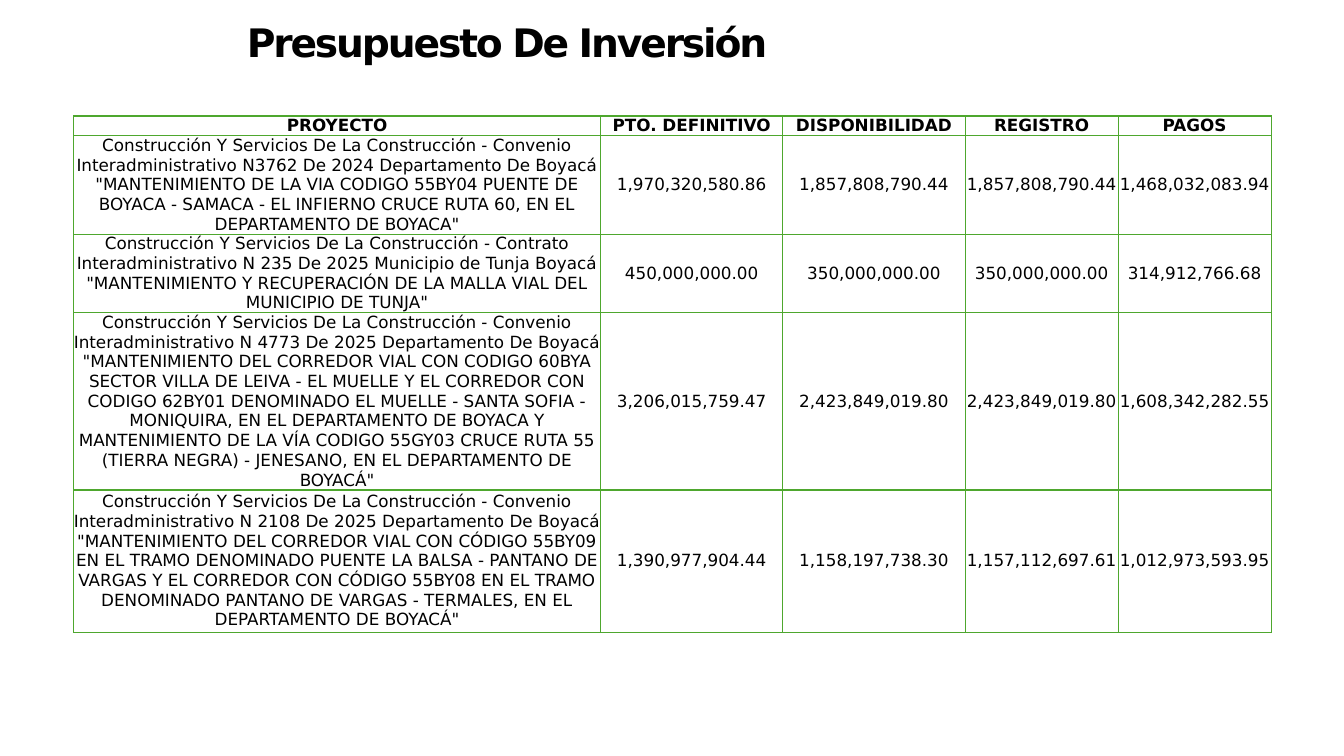
from dataclasses import dataclass

from lxml.etree import SubElement
from pptx import Presentation
from pptx.dml.color import RGBColor
from pptx.enum.text import MSO_ANCHOR as Anchor, PP_ALIGN as Align
from pptx.oxml.ns import qn
from pptx.util import Pt


@dataclass
class Theme:
    font: str = "DejaVu Sans"
    ink: RGBColor = RGBColor(0, 0, 0)
    border: RGBColor = RGBColor(0x4E, 0xA7, 0x2E)
    title_size: int = 28
    table_size: int = 12


theme = Theme()

HEADINGS = ("PROYECTO", "PTO. DEFINITIVO", "DISPONIBILIDAD", "REGISTRO", "PAGOS")
PROJECTS = [
    ('Construcción Y Servicios De La Construcción - Convenio Interadministrativo '
     'N3762 De 2024 Departamento De Boyacá "MANTENIMIENTO DE LA VIA CODIGO 55BY04 '
     'PUENTE DE BOYACA - SAMACA - EL INFIERNO CRUCE RUTA 60, EN EL DEPARTAMENTO DE BOYACA"',
     "1,970,320,580.86", "1,857,808,790.44", "1,857,808,790.44", "1,468,032,083.94"),
    ('Construcción Y Servicios De La Construcción - Contrato Interadministrativo '
     'N 235 De 2025 Municipio de Tunja Boyacá "MANTENIMIENTO Y RECUPERACIÓN DE LA '
     'MALLA VIAL DEL MUNICIPIO DE TUNJA"',
     "450,000,000.00", "350,000,000.00", "350,000,000.00", "314,912,766.68"),
    ('Construcción Y Servicios De La Construcción - Convenio Interadministrativo '
     'N 4773 De 2025 Departamento De Boyacá "MANTENIMIENTO DEL CORREDOR VIAL CON '
     'CODIGO 60BYA SECTOR VILLA DE LEIVA - EL MUELLE Y EL CORREDOR CON CODIGO 62BY01 '
     'DENOMINADO EL MUELLE - SANTA SOFIA - MONIQUIRA, EN EL DEPARTAMENTO DE BOYACA Y '
     'MANTENIMIENTO DE LA VÍA CODIGO 55GY03 CRUCE RUTA 55 (TIERRA NEGRA) - JENESANO, '
     'EN EL DEPARTAMENTO DE BOYACÁ"',
     "3,206,015,759.47", "2,423,849,019.80", "2,423,849,019.80", "1,608,342,282.55"),
    ('Construcción Y Servicios De La Construcción - Convenio Interadministrativo '
     'N 2108 De 2025 Departamento De Boyacá "MANTENIMIENTO DEL CORREDOR VIAL CON '
     'CÓDIGO 55BY09 EN EL TRAMO DENOMINADO PUENTE LA BALSA - PANTANO DE VARGAS Y EL '
     'CORREDOR CON CÓDIGO 55BY08 EN EL TRAMO DENOMINADO PANTANO DE VARGAS - TERMALES, '
     'EN EL DEPARTAMENTO DE BOYACÁ"',
     "1,390,977,904.44", "1,158,197,738.30", "1,157,112,697.61", "1,012,973,593.95"),
]
COLUMN_WIDTHS = (376.4, 130.2, 130.2, 109.3, 109.3)
ROW_HEIGHTS = (13, 63.4, 50.4, 113.8, 101.5)


def style_font(font, size, bold):
    font.name = theme.font
    font.size = Pt(size)
    font.bold = bold
    font.color.rgb = theme.ink


def draw_borders(cell):
    properties = cell._tc.get_or_add_tcPr()
    for side in ("a:lnL", "a:lnR", "a:lnT", "a:lnB"):
        line = SubElement(properties, qn(side), w=str(Pt(1)))
        fill = SubElement(line, qn("a:solidFill"))
        SubElement(fill, qn("a:srgbClr"), val=str(theme.border))


deck = Presentation()
deck.slide_width, deck.slide_height = Pt(960), Pt(540)
page = deck.slides.add_slide(deck.slide_layouts[6])

# Budget table
table = page.shapes.add_table(
    len(ROW_HEIGHTS), len(COLUMN_WIDTHS), Pt(52.6), Pt(82.8),
    Pt(sum(COLUMN_WIDTHS)), Pt(sum(ROW_HEIGHTS))).table
table.first_row = False
table.horz_banding = False
for column, width in zip(table.columns, COLUMN_WIDTHS):
    column.width = Pt(width)

for index, values in enumerate([HEADINGS, *PROJECTS]):
    row = table.rows[index]
    row.height = Pt(ROW_HEIGHTS[index])
    for cell, value in zip(row.cells, values):
        cell.margin_left = cell.margin_right = cell.margin_top = cell.margin_bottom = 0
        cell.vertical_anchor = Anchor.MIDDLE
        draw_borders(cell)
        cell.fill.background()
        para = cell.text_frame.paragraphs[0]
        para.text = value
        para.alignment = Align.CENTER
        style_font(para.font, theme.table_size, index == 0)

# Title
title = page.shapes.add_textbox(Pt(169.2), Pt(9.4), Pt(599.8), Pt(41))
title.text_frame.word_wrap = True
para = title.text_frame.paragraphs[0]
span = para.add_run()
span.text = "Presupuesto De Inversión"
style_font(para.font, theme.title_size, True)
span._r.get_or_add_rPr().set("spc", "-150")

deck.save("out.pptx")
